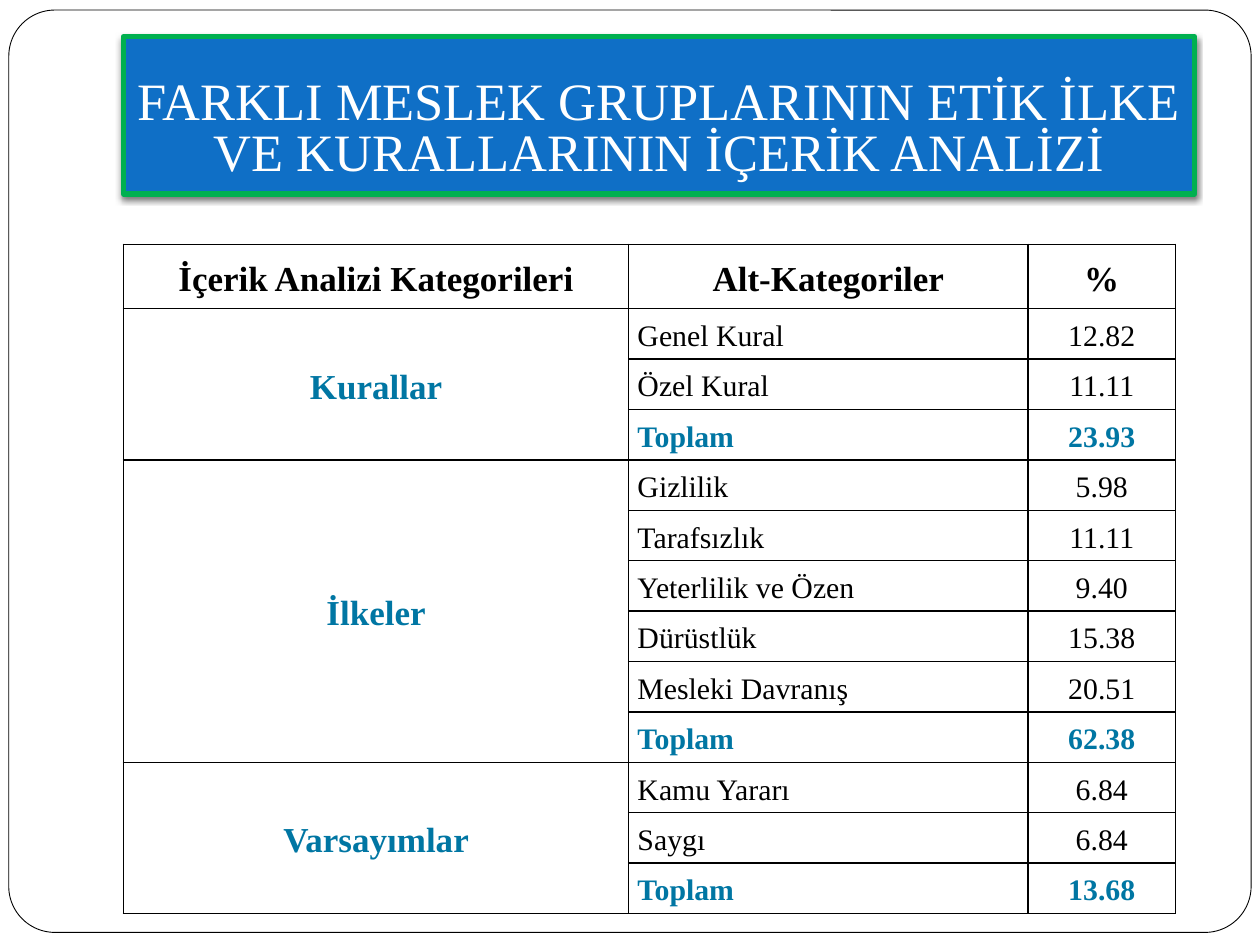
from lxml import etree
from pptx import Presentation
from pptx import util as u
from pptx.dml.color import RGBColor
from pptx.enum import shapes, text
from pptx.oxml import parse_xml
from pptx.oxml.ns import nsdecls, qn

TITLE = "FARKLI MESLEK GRUPLARININ ETİK İLKE VE KURALLARININ İÇERİK ANALİZİ"
HEADER = ("İçerik Analizi Kategorileri", "Alt-Kategoriler", "%")
TOTAL = "Toplam"
GROUPS = [
    ("Kurallar", [("Genel Kural", "12.82"), ("Özel Kural", "11.11"), (TOTAL, "23.93")]),
    ("İlkeler", [("Gizlilik", "5.98"), ("Tarafsızlık", "11.11"),
                 ("Yeterlilik ve Özen", "9.40"), ("Dürüstlük", "15.38"),
                 ("Mesleki Davranış", "20.51"), (TOTAL, "62.38")]),
    ("Varsayımlar", [("Kamu Yararı", "6.84"), ("Saygı", "6.84"), (TOTAL, "13.68")]),
]

FONT = "Times New Roman"
BLACK = RGBColor(0x00, 0x00, 0x00)
WHITE = RGBColor(0xFF, 0xFF, 0xFF)
BLUE = RGBColor(0x0F, 0x6F, 0xC6)
GREEN = RGBColor(0x00, 0xB0, 0x50)
TEAL = RGBColor(0x00, 0x76, 0xA3)

LEFT = 0.98
COLUMNS = (4.01, 3.17, 1.17)
HEADER_HEIGHT, ROW_HEIGHT = 0.51, 0.4
CENTER, START = text.PP_ALIGN.CENTER, text.PP_ALIGN.LEFT


def box(*inches):
    return [u.Inches(v) for v in inches]


def style_text(tf, size, color, bold, align, spacing):
    p = tf.paragraphs[0]
    p.alignment, p.line_spacing = align, spacing
    font = p.runs[0].font
    font.name, font.size, font.bold = FONT, u.Pt(size), bold
    font.color.rgb = color


def add_borders(cell):
    tcPr = cell._tc.get_or_add_tcPr()
    for i, side in enumerate(("lnL", "lnR", "lnT", "lnB")):
        tcPr.insert(i, parse_xml(
            f'<a:{side} {nsdecls("a")} w="{u.Pt(1)}"><a:solidFill>'
            f'<a:srgbClr val="{BLACK}"/></a:solidFill></a:{side}>'))


def fill_cell(cell, value, size, color=BLACK, bold=False, align=CENTER):
    cell.text_frame.text = value
    style_text(cell.text_frame, size, color, bold, align, 1.15)


def add_frame(s):
    sp = s.shapes.add_shape(shapes.MSO_SHAPE.ROUNDED_RECTANGLE, *box(0.07, 0.08, 9.86, 7.32))
    sp.adjustments[0] = 0.05
    sp.shadow.inherit = False
    sp.fill.solid()
    sp.fill.fore_color.rgb = WHITE
    sp.line.color.rgb, sp.line.width = BLACK, u.Pt(0.5)
    s.shapes._spTree.insert(2, sp._element)  # behind the title


def format_title(sp):
    sp.left, sp.top, sp.width, sp.height = box(LEFT, 0.29, 8.5, 1.25)
    sp.fill.solid()
    sp.fill.fore_color.rgb = BLUE
    sp.line.color.rgb, sp.line.width = GREEN, u.Pt(3)
    effects = etree.SubElement(sp._element.spPr, qn("a:effectLst"))
    effects.append(parse_xml(
        f'<a:outerShdw {nsdecls("a")} blurRad="{u.Pt(3)}" dist="{u.Pt(2)}" dir="5400000" '
        f'rotWithShape="0"><a:srgbClr val="{BLACK}"><a:alpha val="50000"/></a:srgbClr>'
        '</a:outerShdw>'))
    tf = sp.text_frame
    tf.text = TITLE
    tf.word_wrap, tf.auto_size = True, text.MSO_AUTO_SIZE.NONE
    tf.vertical_anchor = text.MSO_ANCHOR.BOTTOM
    tf.margin_left, tf.margin_top, tf.margin_right, tf.margin_bottom = box(0.1, 0.05, 0.1, 0.1)
    style_text(tf, 30, WHITE, False, CENTER, 0.8)


def add_analysis_table(s):
    count = sum(len(rows) for _, rows in GROUPS)
    table = s.shapes.add_table(
        count + 1, len(COLUMNS),
        *box(LEFT, 1.94, sum(COLUMNS), HEADER_HEIGHT + count * ROW_HEIGHT)).table
    for column, width in zip(table.columns, COLUMNS):
        column.width = u.Inches(width)
    for i, row in enumerate(table.rows):
        row.height = u.Inches(ROW_HEIGHT if i else HEADER_HEIGHT)
    for cell in table.iter_cells():
        cell.fill.background()
        add_borders(cell)
        cell.vertical_anchor = text.MSO_ANCHOR.MIDDLE
        cell.margin_left = cell.margin_right = u.Inches(0.07)
        cell.margin_top = cell.margin_bottom = 0

    for c, label in enumerate(HEADER):
        fill_cell(table.cell(0, c), label, 20, bold=True)
    first = 1
    for category, rows in GROUPS:
        table.cell(first, 0).merge(table.cell(first + len(rows) - 1, 0))
        fill_cell(table.cell(first, 0), category, 20, TEAL, True)
        for r, (name, share) in enumerate(rows, first):
            look = (17, TEAL, True) if name == TOTAL else (17, BLACK, False)
            fill_cell(table.cell(r, 1), name, *look, align=START)
            fill_cell(table.cell(r, 2), share, *look)
        first += len(rows)


def main():
    prs = Presentation()
    prs.slide_width, prs.slide_height = box(10, 7.5)
    s = prs.slides.add_slide(prs.slide_layouts[5])
    add_frame(s)
    format_title(s.shapes.title)
    add_analysis_table(s)
    prs.save("out.pptx")


if __name__ == "__main__":
    main()
